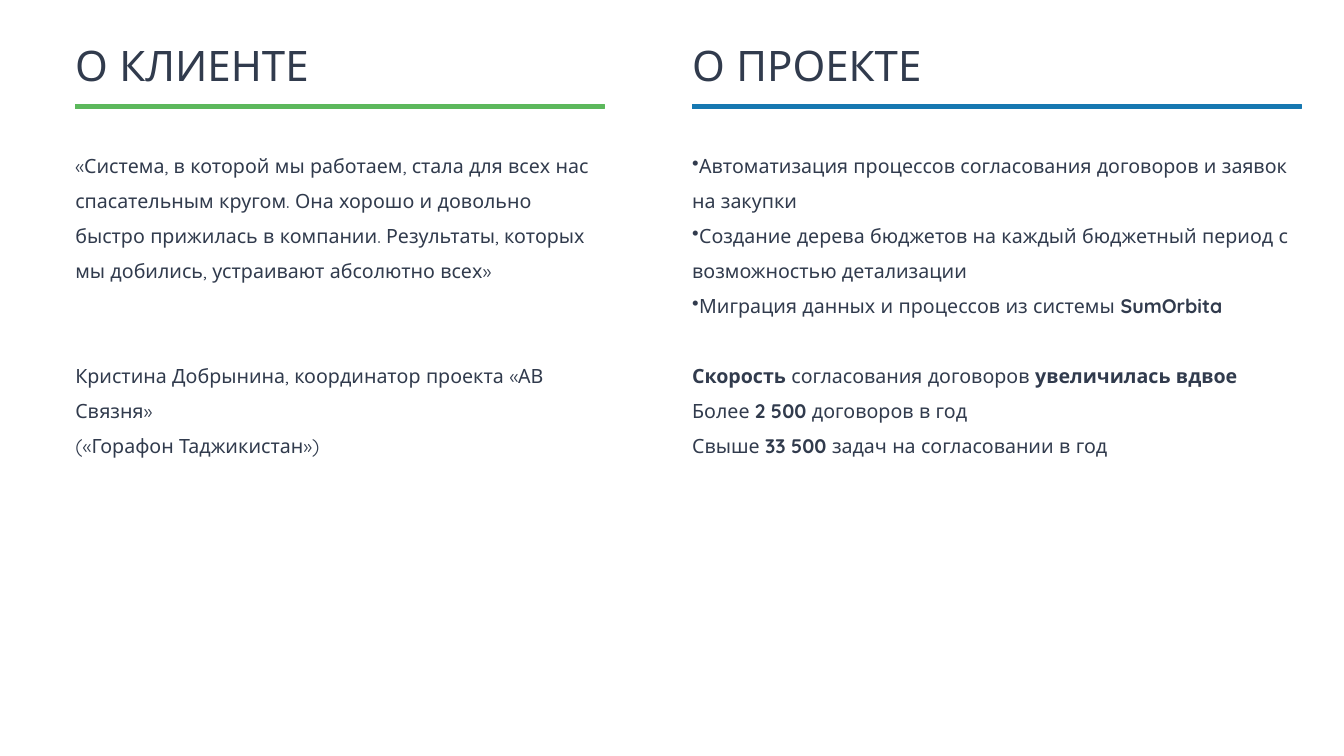
from lxml import etree
from pptx import Presentation
from pptx.dml.color import RGBColor
from pptx.enum.shapes import MSO_SHAPE
from pptx.oxml.ns import qn
from pptx.util import Pt

RECTANGLE = MSO_SHAPE.RECTANGLE
FONT = "Quicksand"
INK = "313B4D"
LINE_PITCH = 37.5


def color(value):
    return RGBColor.from_string(value)


def add_text(left, top, width, height, paragraphs, size=21, spacing=LINE_PITCH):
    box = slide.shapes.add_textbox(Pt(left), Pt(top), Pt(width), Pt(height))
    frame = box.text_frame
    frame.word_wrap = True
    frame.margin_left = frame.margin_top = frame.margin_right = frame.margin_bottom = 0
    for index, (spans, bullet, gap) in enumerate(paragraphs):
        para = frame.paragraphs[0] if index == 0 else frame.add_paragraph()
        para.line_spacing = Pt(spacing)
        para.space_before = Pt(gap)
        if bullet:
            properties = para._p.get_or_add_pPr()
            properties.set("marL", "0")
            properties.set("indent", str(-Pt(21.6)))
            etree.SubElement(properties, qn("a:buChar")).set("char", "•")
        for text, bold in spans:
            span = para.add_run()
            span.text = text
            span.font.name = FONT
            span.font.size = Pt(size)
            span.font.bold = bold
            span.font.color.rgb = color(INK)


deck = Presentation()
deck.slide_width = Pt(1440)
deck.slide_height = Pt(810)
slide = deck.slides.add_slide(deck.slide_layouts[6])

client = [
    ([("«Система, в которой мы работаем, стала для всех нас спасательным кругом. "
       "Она хорошо и довольно быстро прижилась в компании. Результаты, которых мы "
       "добились, устраивают абсолютно всех»", False)], False, 0),
    ([("Кристина Добрынина, координатор проекта «АВ Связня»", False)], False, 2 * LINE_PITCH),
    ([("(«Горафон Таджикистан»)", False)], False, 0),
]
project = [
    ([("Автоматизация процессов согласования договоров и заявок на закупки", False)], True, 0),
    ([("Создание дерева бюджетов на каждый бюджетный период с возможностью детализации",
       False)], True, 0),
    ([("Миграция данных и процессов из системы ", False), ("SumOrbita", True)], True, 0),
    ([("Скорость ", True), ("согласования договоров ", False),
      ("увеличилась вдвое", True)], False, LINE_PITCH),
    ([("Более ", False), ("2 500 ", True), ("договоров в год", False)], False, 0),
    ([("Свыше ", False), ("33 500 ", True), ("задач на согласовании в год", False)], False, 0),
]
columns = [
    ("О КЛИЕНТЕ", 80.64, 455.76, 566.64, "5CB85C", 555.12, 369.36, client),
    ("О ПРОЕКТЕ", 741.6, 380.16, 652.32, "1678B1", 656.64, 428.4, project),
]

for title, left, title_width, rule_width, accent, body_width, body_height, body in columns:
    add_text(left, 64.08, title_width, 34.56, [([(title, False)], False, 0)],
             size=45, spacing=32.5)
    rule = slide.shapes.add_shape(RECTANGLE, Pt(left), Pt(111.6), Pt(rule_width), Pt(5.04))
    rule.shadow.inherit = False
    rule.fill.solid()
    rule.fill.fore_color.rgb = color(accent)
    rule.line.color.rgb = color(accent)
    rule.line.width = Pt(0.75)
    add_text(left, 152.64, body_width, body_height, body)

deck.save("out.pptx")
